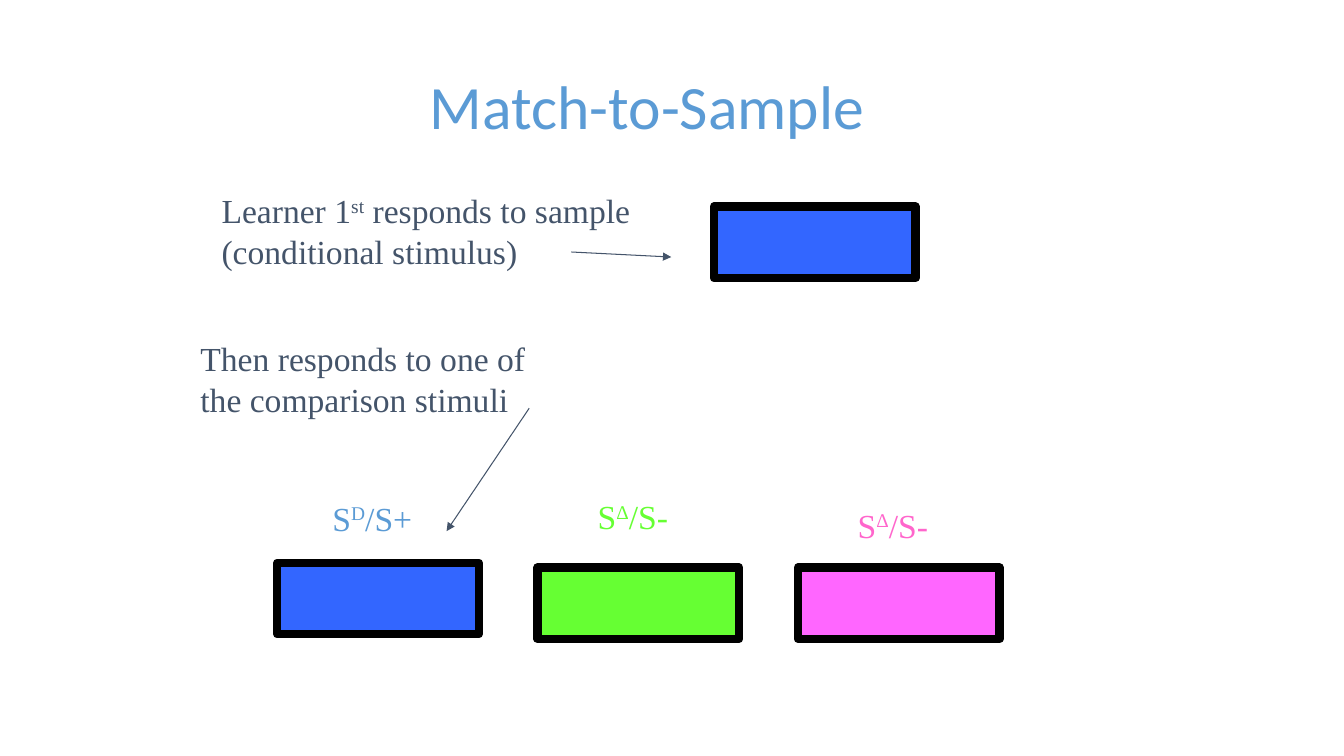
from pptx import Presentation
from pptx.dml.color import RGBColor
from pptx.enum.shapes import MSO_CONNECTOR, MSO_SHAPE
from pptx.enum.text import MSO_ANCHOR
from pptx.oxml.ns import qn
from pptx.util import Pt
from lxml.etree import SubElement

COLORS = {
    "title": "5B9BD5",
    "text": "44546A",
    "border": "000000",
    "blue": "3366FF",
    "green": "66FF33",
    "magenta": "FF66FF",
    "pink": "FF66CC",
}


def rgb(name):
    return RGBColor.from_string(COLORS[name])


def add_text(page, position, pieces, color, font="Times New Roman", size=24):
    box = page.shapes.add_textbox(*[Pt(value) for value in position])
    frame = box.text_frame
    frame.word_wrap = True
    para = frame.paragraphs[0]
    for index, piece in enumerate(pieces):
        span = para.add_run()
        span.text = piece
        span.font.name = font
        span.font.size = Pt(size)
        span.font.color.rgb = rgb(color)
        if index == 1:
            span.font._element.set("baseline", "30000")
    return frame


deck = Presentation()
deck.slide_width = Pt(960)
deck.slide_height = Pt(540)
page = deck.slides.add_slide(deck.slide_layouts[6])

title = add_text(page, (300, 18, 372, 120), ["Match-to-Sample"], "title", "Calibri", 44)
title.vertical_anchor = MSO_ANCHOR.MIDDLE
title.paragraphs[0].line_spacing = 0.9

stimuli = [
    (510, 147.6, "blue"),
    (198, 402, "blue"),
    (384, 405.4, "green"),
    (570, 405.4, "magenta"),
]
for left, top, color in stimuli:
    stimulus = page.shapes.add_shape(MSO_SHAPE.RECTANGLE, Pt(left), Pt(top), Pt(144), Pt(51))
    stimulus.shadow.inherit = False
    stimulus.fill.solid()
    stimulus.fill.fore_color.rgb = rgb(color)
    stimulus.line.color.rgb = rgb("border")
    stimulus.line.width = Pt(6)

captions = [
    ((151.2, 131.8, 328.3, 65.5), ["Learner 1", "st", " responds to sample (conditional stimulus)"], "text"),
    ((136.1, 237.6, 271.4, 65.5), ["Then responds to one of the comparison stimuli"], "text"),
    ((230.4, 351.4, 74.2, 36), ["S", "D", "/S+"], "title"),
    ((419.8, 350.6, 72, 36), ["S", "Δ", "/S-"], "green"),
    ((605.5, 356.4, 72, 36), ["S", "Δ", "/S-"], "pink"),
]
for position, pieces, color in captions:
    caption = add_text(page, position, pieces, color)
    caption.paragraphs[0].line_spacing = Pt(29.2)

arrows = [(378, 291.6, 319, 379.4), (408.2, 180, 479.5, 183.6)]
for ends in arrows:
    arrow = page.shapes.add_connector(MSO_CONNECTOR.STRAIGHT, *[Pt(value) for value in ends])
    arrow.line.color.rgb = rgb("text")
    arrow.line.width = Pt(0.75)
    SubElement(arrow.line._get_or_add_ln(), qn("a:tailEnd"), type="triangle")
    SubElement(arrow._element.spPr, qn("a:effectLst"))

deck.save("out.pptx")
